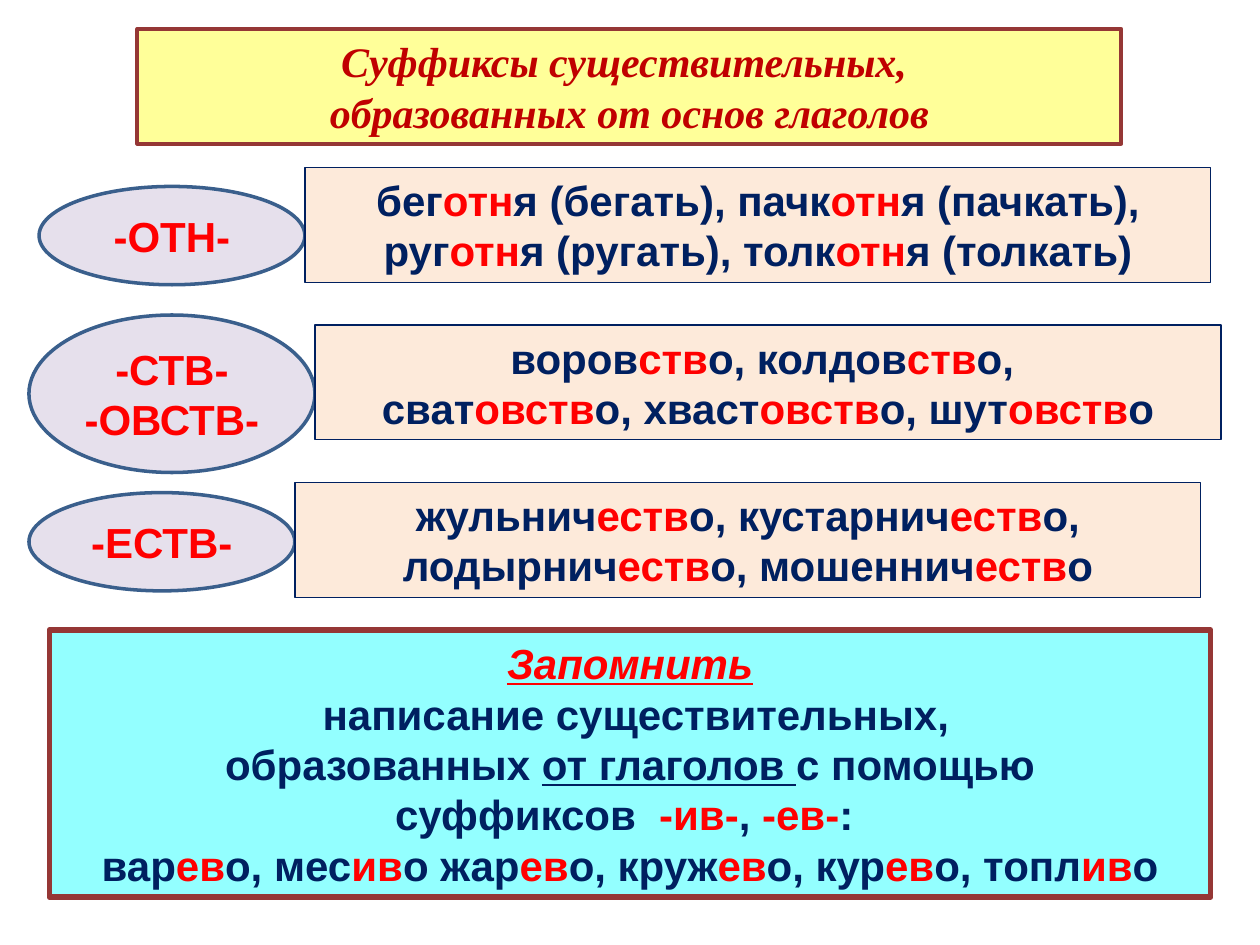
from dataclasses import dataclass

import pptx
import pptx.dml.color
import pptx.enum.shapes
import pptx.enum.text
import pptx.util

Inches = pptx.util.Inches
SHAPES = pptx.enum.shapes.MSO_SHAPE


@dataclass(frozen=True)
class Theme:
    title_font: str = "Times New Roman"
    body_font: str = "Arial"
    size: int = 24
    title: str = "C00000"
    title_fill: str = "FFFF99"
    frame: str = "953735"
    navy: str = "002060"
    red: str = "FF0000"
    oval_fill: str = "E6E0EC"
    oval_line: str = "3A5F8C"
    example_fill: str = "FDEADA"
    rule_fill: str = "93FFFF"


def rgb(value):
    return pptx.dml.color.RGBColor.from_string(value)


def add_text(paragraph, text, *, font, size, color, accent=None,
             italic=False, underline=False):
    """Write bold text; *stars* mark accent colour, _underscores_ underline."""
    for i, colored in enumerate(text.split("*")):
        for j, piece in enumerate(colored.split("_")):
            if not piece:
                continue
            run = paragraph.add_run()
            run.text = piece
            run.font.name = font
            run.font.size = pptx.util.Pt(size)
            run.font.bold = True
            run.font.italic = italic
            run.font.underline = underline or j % 2 == 1
            run.font.color.rgb = rgb(accent if i % 2 else color)


class SlideBuilder:
    def __init__(self, slide, theme):
        self.slide = slide
        self.theme = theme

    def panel(self, kind, bounds, fill, line, width, lines, **text_format):
        """Add a filled shape; each line is text or (text, format changes)."""
        shape = self.slide.shapes.add_shape(kind, *map(Inches, bounds))
        shape.shadow.inherit = False
        shape.fill.solid()
        shape.fill.fore_color.rgb = rgb(fill)
        shape.line.color.rgb = rgb(line)
        shape.line.width = pptx.util.Pt(width)
        frame = shape.text_frame
        frame.word_wrap = True
        frame.vertical_anchor = pptx.enum.text.MSO_ANCHOR.MIDDLE
        text_format = {"font": self.theme.body_font, "size": self.theme.size,
                       "color": self.theme.navy, "accent": self.theme.red,
                       **text_format}
        for index, line_text in enumerate(lines):
            text, changes = (line_text if isinstance(line_text, tuple)
                             else (line_text, {}))
            paragraph = (frame.add_paragraph() if index
                         else frame.paragraphs[0])
            paragraph.alignment = pptx.enum.text.PP_ALIGN.CENTER
            add_text(paragraph, text, **{**text_format, **changes})
        return shape

    def title(self, bounds, lines):
        theme = self.theme
        self.panel(SHAPES.RECTANGLE, bounds, theme.title_fill, theme.frame,
                   2.25, lines, font=theme.title_font, color=theme.title,
                   italic=True)

    def suffix(self, bounds, lines):
        theme = self.theme
        oval = self.panel(SHAPES.OVAL, bounds, theme.oval_fill,
                          theme.oval_line, 2, lines, color=theme.red)
        oval.text_frame.margin_left = oval.text_frame.margin_right = 0

    def examples(self, left, top, lines):
        theme = self.theme
        self.panel(SHAPES.RECTANGLE, (left, top, 7.19, 0.91),
                   theme.example_fill, theme.navy, 0.75, lines)

    def rule(self, bounds, lines):
        theme = self.theme
        self.panel(SHAPES.RECTANGLE, bounds, theme.rule_fill, theme.frame, 3,
                   lines)


# Suffix oval bounds, suffixes, top of the examples, examples
ROWS = [
    ((0.31, 1.48, 2.11, 0.78), ["-ОТН-"], 1.33,
     ["бег*отн*я (бегать), пачк*отн*я (пачкать), "
      "руг*отн*я (ругать), толк*отн*я (толкать)"]),
    ((0.23, 2.5, 2.27, 1.25), ["-СТВ-", "-ОВСТВ-"], 2.58,
     ["воров*ств*о, колдов*ств*о, ",
      "сват*овств*о, хваст*овств*о, шут*овств*о"]),
    ((0.23, 3.91, 2.11, 0.78), ["-ЕСТВ-"], 3.83,
     ["жульнич*еств*о, кустарнич*еств*о, "
      "лодырнич*еств*о, мошеннич*еств*о"]),
]


def main():
    presentation = pptx.Presentation()
    presentation.slide_width = Inches(10)
    presentation.slide_height = Inches(7.5)
    theme = Theme()
    slide = presentation.slides.add_slide(presentation.slide_layouts[6])
    builder = SlideBuilder(slide, theme)

    # Heading
    builder.title((1.09, 0.23, 7.81, 0.91),
                  ["Суффиксы существительных, ",
                   "образованных от основ глаголов"])

    # Suffixes, each touching its examples
    for oval, suffixes, top, examples in ROWS:
        builder.suffix(oval, suffixes)
        builder.examples(oval[0] + oval[2], top, examples)

    # Rule to remember
    builder.rule((0.39, 5, 9.22, 2.12), [
        ("Запомнить", {"color": theme.red, "italic": True,
                       "underline": True}),
        " написание существительных,",
        " образованных _от глаголов _с помощью ",
        "суффиксов  *-ив-*,* -ев-*: ",
        "вар*ев*о, мес*ив*о жар*ев*о, круж*ев*о, кур*ев*о, топл*ив*о",
    ])

    presentation.save("out.pptx")


if __name__ == "__main__":
    main()
